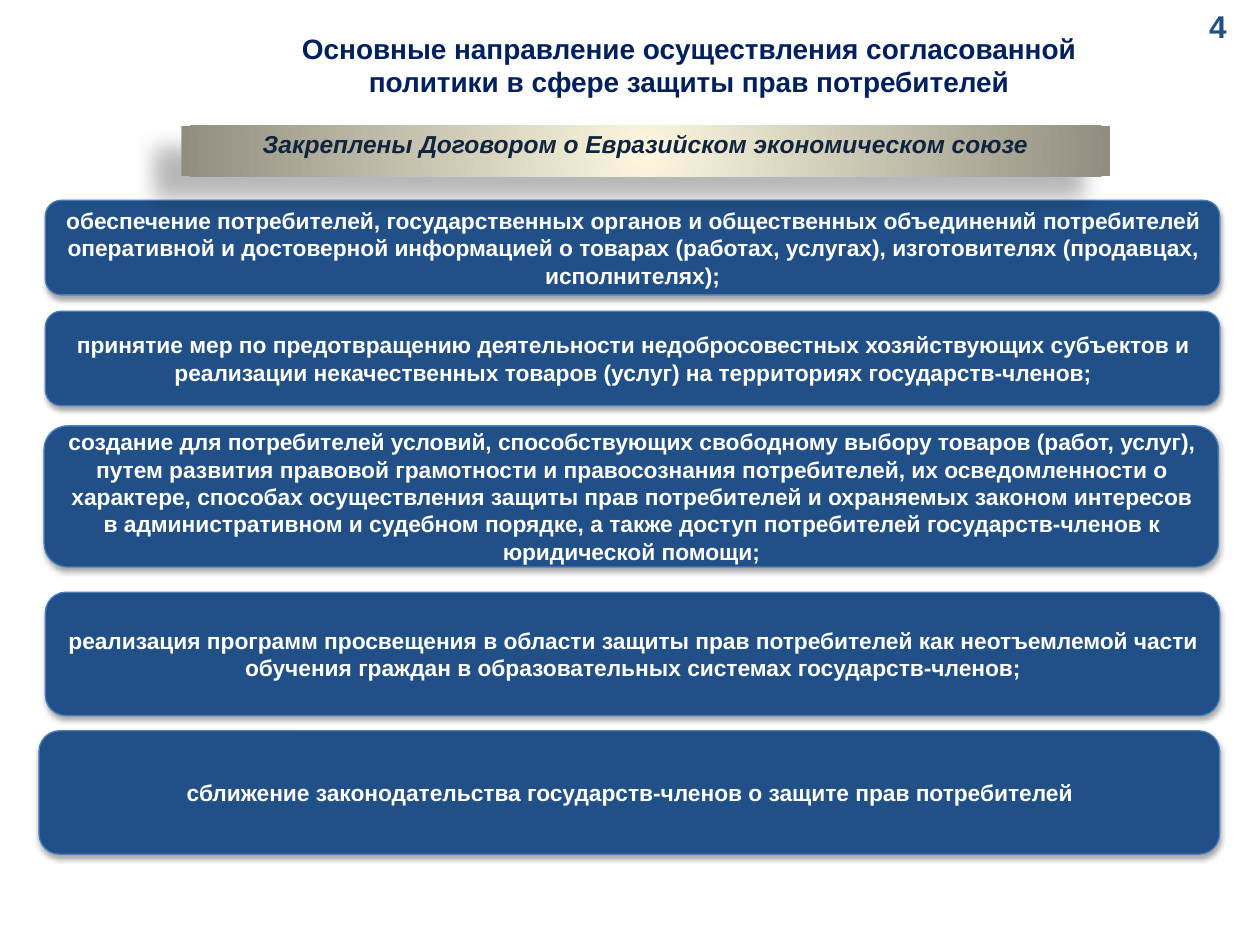
"""Build a slide listing the directions of consumer protection policy."""
from lxml import etree
from pptx import Presentation, util as u
from pptx.dml.color import RGBColor
from pptx.enum import shapes, text
from pptx.oxml.ns import qn

COLUMNS, ROWS = 100, 75
NAVY, WHITE = "214F87", "FFFFFF"
DIRECTIONS = [
    (3.6, 15.9, 93.2, 7.5, "обеспечение потребителей, государственных органов и общественных объединений "
     "потребителей оперативной и достоверной информацией о товарах (работах, услугах), "
     "изготовителях (продавцах, исполнителях);"),
    (3.6, 24.7, 93.2, 7.5, "принятие мер по предотвращению деятельности недобросовестных хозяйствующих "
     "субъектов и реализации некачественных товаров (услуг) на территориях государств-членов;"),
    (3.5, 33.8, 93.2, 11.2, "создание для потребителей условий, способствующих свободному выбору товаров "
     "(работ, услуг), путем развития правовой грамотности и правосознания потребителей, их "
     "осведомленности о характере, способах осуществления защиты прав потребителей и охраняемых "
     "законом интересов в административном и судебном порядке, а также доступ потребителей "
     "государств-членов к юридической помощи;"),
    (3.6, 47, 93.2, 9.8, "реализация программ просвещения в области защиты прав потребителей как "
     "неотъемлемой части обучения граждан в образовательных системах государств-членов;"),
    (3.1, 58, 93.7, 9.8, "сближение законодательства государств-членов о защите прав потребителей"),
]


def color(value):
    return RGBColor.from_string(value)


def child(parent, tag, **attributes):
    return etree.SubElement(parent, qn(tag), {key: str(value) for key, value in attributes.items()})


class SlideBuilder:
    """Hold the style and the current slide."""

    font = {"name": "Arial", "bold": True}

    def __init__(self, presentation):
        self.cell_width = presentation.slide_width / COLUMNS
        self.cell_height = presentation.slide_height / ROWS
        self.slide = presentation.slides.add_slide(presentation.slide_layouts[5])

    def box(self, column, row, columns, rows):
        return (round(column * self.cell_width), round(row * self.cell_height),
                round(columns * self.cell_width), round(rows * self.cell_height))

    def set_words(self, shape, words, fill, anchor=text.MSO_ANCHOR.TOP, spacing=None, **formats):
        frame = shape.text_frame
        for name, value in {"word_wrap": True, "auto_size": text.MSO_AUTO_SIZE.NONE,
                            "vertical_anchor": anchor}.items():
            setattr(frame, name, value)
        paragraph = frame.paragraphs[0]
        paragraph.alignment = text.PP_ALIGN.CENTER
        paragraph.line_spacing = spacing
        run = paragraph.add_run()
        run.text = words
        for name, value in {**self.font, **formats}.items():
            setattr(run.font, name, value)
        run.font.color.rgb = color(fill)
        return run

    def shadow(self, effects, opacity, blur, distance, angle):
        outer = child(effects, "a:outerShdw", blurRad=u.Pt(blur), dist=u.Pt(distance),
                      dir=angle * 60000, algn="ctr", rotWithShape=0)
        child(child(outer, "a:srgbClr", val="000000"), "a:alpha", val=opacity * 1000)

    def shape(self, kind, place, *shadow):
        shape = self.slide.shapes.add_shape(kind, *self.box(*place))
        shape.shadow.inherit = False
        self.shadow(shape._element.spPr.find(qn("a:effectLst")), *shadow)
        return shape

    def title(self, place, words):
        title = self.slide.shapes.title
        title.left, title.top, title.width, title.height = self.box(*place)
        run = self.set_words(title, words, "002060", text.MSO_ANCHOR.MIDDLE, size=u.Pt(16))
        effects = etree.Element(qn("a:effectLst"))
        run._r.rPr.find(qn("a:solidFill")).addnext(effects)
        self.shadow(effects, 43, 3, 3, 45)

    def label(self, place, words):
        label = self.slide.shapes.add_textbox(*self.box(*place))
        self.set_words(label, words, NAVY, size=u.Pt(18))

    def card(self, place, words):
        card = self.shape(shapes.MSO_SHAPE.ROUNDED_RECTANGLE, place, 35, 3.1, 1.8, 90)
        card.fill.solid()
        card.fill.fore_color.rgb = color(NAVY)
        card.line.color.rgb = color("4B7EBC")
        card.line.width = u.Pt(0.75)
        self.set_words(card, words, WHITE, text.MSO_ANCHOR.MIDDLE, size=u.Pt(13))

    def banner(self, place, words):
        banner = self.shape(shapes.MSO_SHAPE.RECTANGLE, place, 28, 11.8, 19.7, 141)
        banner.line.fill.background()
        gradient = etree.Element(qn("a:gradFill"), rotWithShape="1")
        stops = child(gradient, "a:gsLst")
        for position, value in ((0, "FCF7DD"), (100, "918E81")):
            child(child(stops, "a:gs", pos=position * 1000), "a:srgbClr", val=value)
        center = child(gradient, "a:path", path="circle")
        child(center, "a:fillToRect", **dict.fromkeys("ltrb", 50000))
        banner._element.spPr.find(qn("a:prstGeom")).addnext(gradient)
        self.set_words(banner, words, "0F243E", spacing=0.9, size=u.Pt(14), italic=True)


def main():
    presentation = Presentation()
    presentation.slide_width, presentation.slide_height = u.Inches(10), u.Inches(7.5)
    builder = SlideBuilder(presentation)
    builder.title((20.3, 1.8, 68.8, 6.7), "Основные направление осуществления согласованной "
                  "политики в сфере защиты прав потребителей")
    builder.label((93.3, 0.1, 6.7, 4.2), "4")
    for *place, words in DIRECTIONS:
        builder.card(place, words)
    builder.banner((14.4, 10, 73.7, 4), "Закреплены Договором о Евразийском экономическом союзе")
    presentation.save("out.pptx")


if __name__ == "__main__":
    main()
